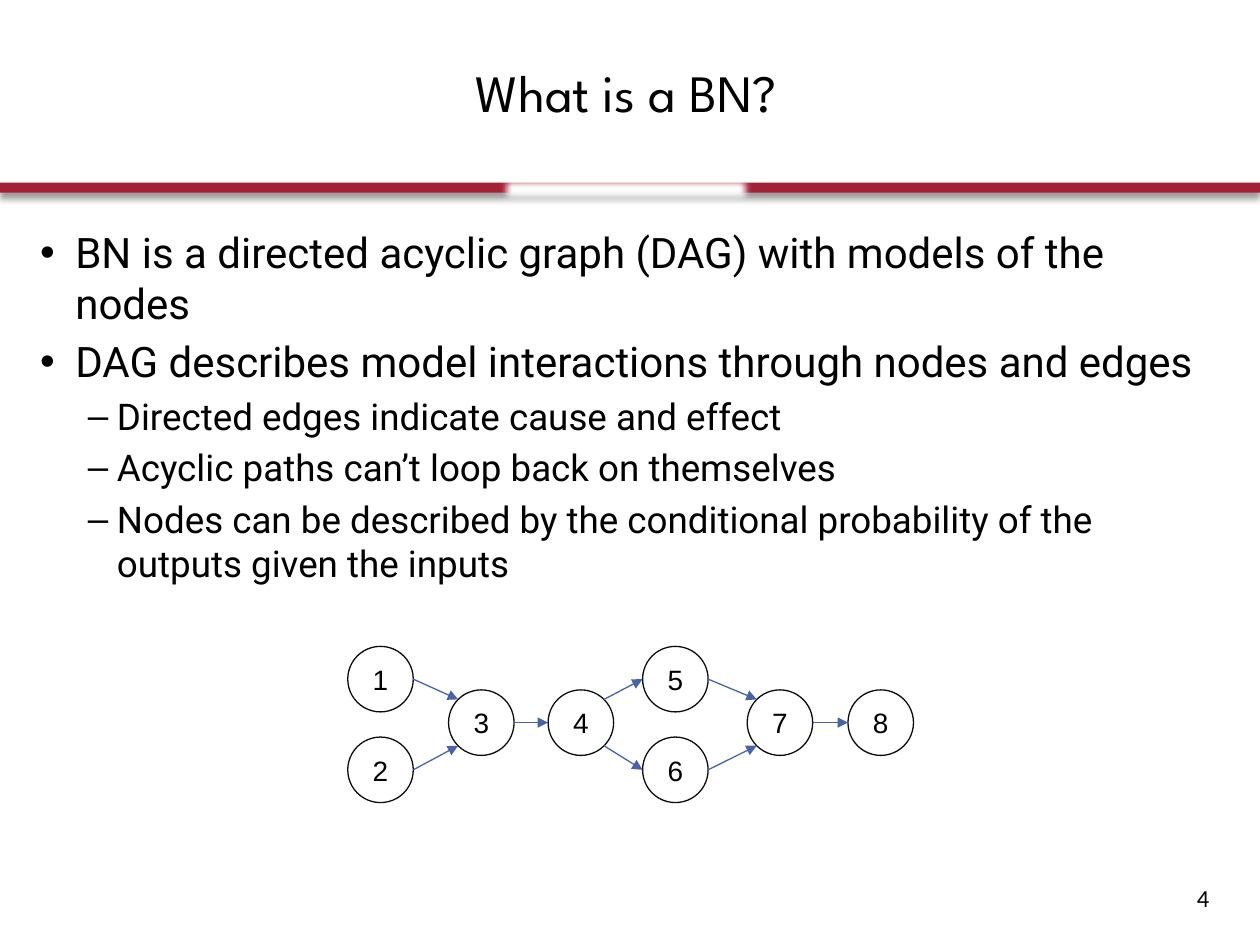
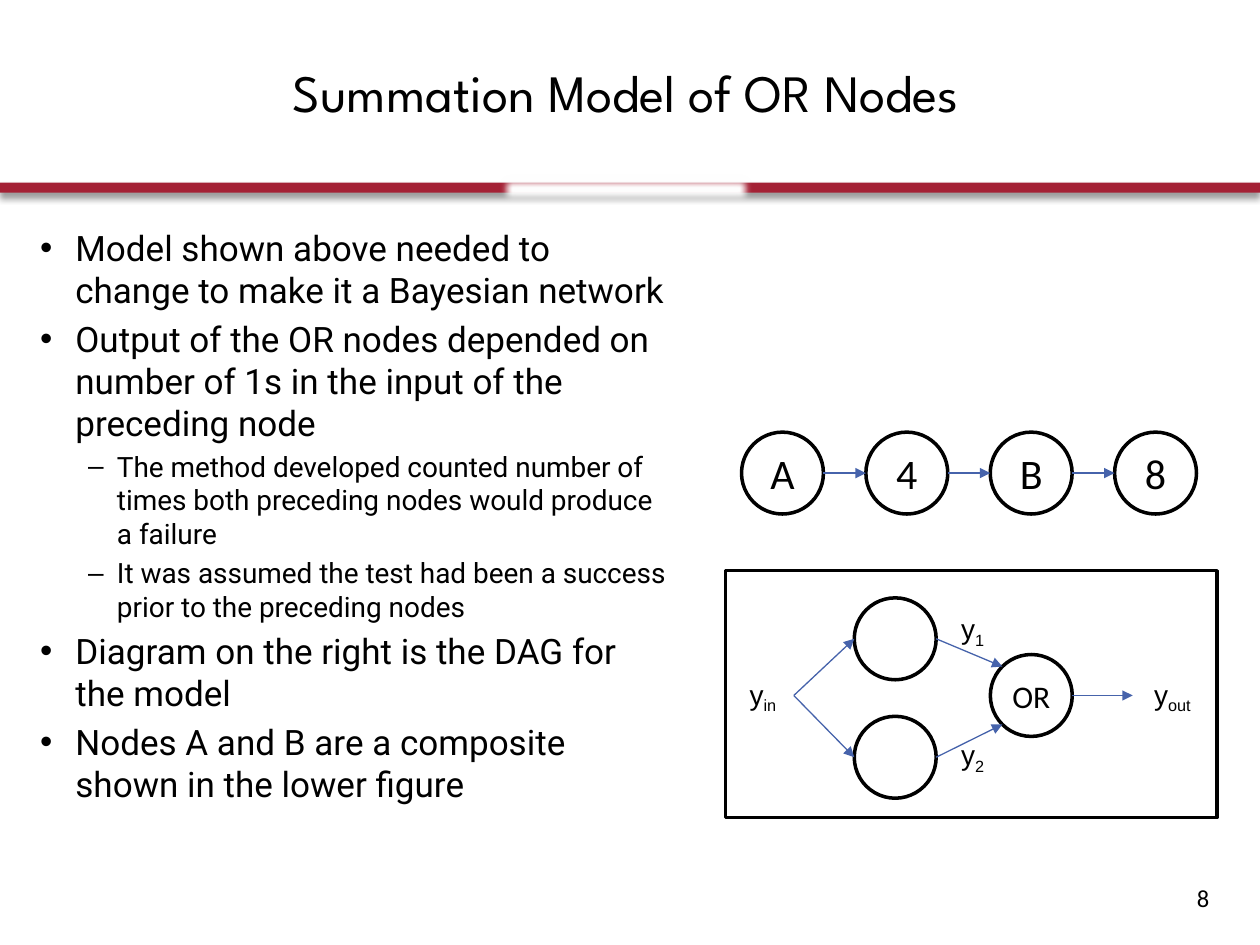
"""Builds two slides on Bayesian networks and OR nodes."""
from collections import namedtuple
from math import copysign, sqrt

from lxml.etree import SubElement, fromstring
from pptx import Presentation
from pptx.dml.color import RGBColor
from pptx.enum.shapes import MSO_CONNECTOR as Link, MSO_SHAPE as Shape
from pptx.enum.text import MSO_ANCHOR as Anchor, PP_ALIGN as Align
from pptx.oxml.ns import qn
from pptx.util import Inches, Pt

NS = 'xmlns:a="http://schemas.openxmlformats.org/drawingml/2006/main"'
CELL = 0.1
COLUMNS, ROWS = 100, 75
Node = namedtuple("Node", "x y radius")


def cells(*counts):
    return [Inches(count * CELL) for count in counts]


def rgb(code):
    return RGBColor.from_string(code)


class Deck:
    """Holds the shared style and the slide being drawn."""
    BLACK, WHITE, RED, BLUE = "000000", "FFFFFF", "A42135", "4663AB"
    HEADING, BODY, LABEL, NUMBER = "League Spartan", "Roboto", "Arial", "Calibri"
    LEVELS = [("•", 0.28, -0.28), ("–", 0.61, -0.23)]

    def __init__(self):
        self.file = Presentation()
        self.file.slide_width, self.file.slide_height = cells(COLUMNS, ROWS)
        self.slide = None

    def start(self, title, number):
        self.slide = self.file.slides.add_slide(self.file.slide_layouts[6])
        band = self.shape(Shape.RECTANGLE, 0, 14.5, COLUMNS, 0.8, fill=self.RED)
        self.effect(band, '<a:outerShdw blurRad="50800" dist="38100" dir="5400000">'
                    '<a:srgbClr val="000000"><a:alpha val="40000"/></a:srgbClr></a:outerShdw>')
        gap = self.shape(Shape.RECTANGLE, 39.4, 13.6, 20.6, 2.9, fill=self.WHITE)
        self.effect(gap, '<a:softEdge rad="63500"/>')
        heading = self.frame(self.box(17.7, 1.8, 64, 11), Align.CENTER, Anchor.MIDDLE)
        self.run(heading, title, 30, self.HEADING)
        page = self.frame(self.box(94, 69.6, 5.1, 4))
        self.run(page, number, 14, self.NUMBER)

    def box(self, *place):
        return self.slide.shapes.add_textbox(*cells(*place))

    def shape(self, kind, *place, fill=None, line=None, width=0.75):
        shape = self.slide.shapes.add_shape(kind, *cells(*place))
        shape.shadow.inherit = False
        if fill:
            shape.fill.solid()
            shape.fill.fore_color.rgb = rgb(fill)
        else:
            shape.fill.background()
        if line:
            shape.line.color.rgb = rgb(line)
            shape.line.width = Pt(width)
        else:
            shape.line.fill.background()
        return shape

    def effect(self, shape, inner):
        effects = shape._element.spPr.find(qn("a:effectLst"))
        effects.append(fromstring(inner.replace(" ", f" {NS} ", 1)))

    def frame(self, shape, align=Align.LEFT, anchor=Anchor.TOP, tight=False):
        frame = shape.text_frame
        frame.word_wrap, frame.vertical_anchor = True, anchor
        if tight:
            frame.margin_left = frame.margin_right = frame.margin_top = frame.margin_bottom = 0
        frame.paragraphs[0].alignment = align
        return frame.paragraphs[0]

    def run(self, paragraph, words, size, face):
        run = paragraph.add_run()
        run.text = words
        run.font.size, run.font.name = Pt(size), face
        run.font.color.rgb = rgb(self.BLACK)
        return run._r.get_or_add_rPr()

    def bullets(self, place, sizes, points):
        area = self.box(*place)
        first = self.frame(area)
        for index, (level, words) in enumerate(points):
            point = area.text_frame.add_paragraph() if index else first
            mark, margin, indent = self.LEVELS[level]
            props = point._p.get_or_add_pPr()
            props.set("marL", str(Inches(margin)))
            props.set("indent", str(Inches(indent)))
            SubElement(props, qn("a:buFont")).set("typeface", self.LABEL)
            SubElement(props, qn("a:buChar")).set("char", mark)
            point.level = level
            point.space_before = Pt(0.2 * sizes[level] if index else 0)
            self.run(point, words, sizes[level], self.BODY)

    def node(self, node, words="", kind=Shape.OVAL, size=24, face=NUMBER, line=BLACK, width=2):
        side = 2 * node.radius
        circle = self.shape(kind, node.x - node.radius, node.y - node.radius, side, side,
                            line=line, width=width)
        if words:
            label = self.frame(circle, Align.CENTER, Anchor.MIDDLE, tight=True)
            self.run(label, words, size, face)

    def variable(self, subscript, *place):
        label = self.frame(self.box(*place), Align.CENTER, Anchor.MIDDLE, tight=True)
        self.run(label, "y", 16, self.LABEL)
        self.run(label, subscript, 16, self.LABEL).set("baseline", "-25000")

    def rim(self, node, other, axis):
        reach = copysign(node.radius, other.x - node.x)
        if node.y == axis != other.y:
            corner = node.radius / sqrt(2)
            return (node.x + reach / sqrt(2), node.y + copysign(corner, other.y - axis))
        return node.x + reach, node.y

    def arrow(self, source, target, axis):
        ends = self.rim(source, target, axis) + self.rim(target, source, axis)
        arrow = self.slide.shapes.add_connector(Link.STRAIGHT, *cells(*ends))
        arrow.line.color.rgb = rgb(self.BLUE)
        arrow.line.width = Pt(0.75)
        SubElement(arrow.line._get_or_add_ln(), qn("a:tailEnd")).set("type", "triangle")
        SubElement(arrow._element.spPr, qn("a:effectLst"))


def network_slide(deck):
    deck.start("What is a BN?", "4")
    deck.bullets((2.2, 17.5, 95.4, 30.8), (24, 21), [
        (0, "BN is a directed acyclic graph (DAG) with models of the nodes"),
        (0, "DAG describes model interactions through nodes and edges"),
        (1, "Directed edges indicate cause and effect"),
        (1, "Acyclic paths can’t loop back on themselves"),
        (1, "Nodes can be described by the conditional probability of the outputs "
            "given the inputs"),
    ])
    upper, axis, lower = 53.9, 57.35, 61.1
    centres = {"1": (30.2, upper), "2": (30.2, lower), "3": (38.2, axis), "4": (46.1, axis),
               "5": (53.6, upper), "6": (53.6, lower), "7": (61.9, axis), "8": (69.9, axis)}
    nodes = {name: Node(*centre, 2.6) for name, centre in centres.items()}
    for name, node in nodes.items():
        deck.node(node, name, Shape.FLOWCHART_CONNECTOR, 16, deck.LABEL, "0C0C0C", 0.75)
    for source, target in ("13", "23", "34", "45", "46", "57", "67", "78"):
        deck.arrow(nodes[source], nodes[target], axis)


def or_slide(deck):
    deck.start("Summation Model of OR Nodes", "8")
    deck.bullets((2.2, 17.5, 52.1, 49.5), (20, 16), [
        (0, "Model shown above needed to change to make it a Bayesian network"),
        (0, "Output of the OR nodes depended on number of 1s in the input of the preceding node"),
        (1, "The method developed counted number of times both preceding nodes would "
            "produce a failure"),
        (1, "It was assumed the test had been a success prior to the preceding nodes"),
        (0, "Diagram on the right is the DAG for the model"),
        (0, "Nodes A and B are a composite shown in the lower figure"),
    ])
    radius, chain_row, axis = 3.25, 37.55, 55.2
    chain = [Node(62.1 + 9.87 * step, chain_row, radius) for step in range(4)]
    for node, name in zip(chain, "A4B8"):
        deck.node(node, name)
    for source, target in zip(chain, chain[1:]):
        deck.arrow(source, target, chain_row)

    deck.shape(Shape.RECTANGLE, 57.6, 45.3, 39, 19.6, line=deck.BLACK, width=2)
    entry, leave = Node(63, axis, 0), Node(89.9, axis, 0)
    gate = Node(81.85, axis, radius)
    deck.node(gate, "OR", size=18)
    for row in (50.7, 60.1):
        branch = Node(71.05, row, radius)
        deck.node(branch)
        deck.arrow(entry, branch, axis)
        deck.arrow(branch, gate, axis)
    deck.arrow(gate, leave, axis)
    for subscript, left, top, width in (("in", 58.2, 53.4, 4.7), ("out", 89.8, 53.4, 6.5),
                                        ("1", 73.1, 48.2, 8.2), ("2", 73.1, 58.2, 8.2)):
        deck.variable(subscript, left, top, width, 3.7)


def main():
    deck = Deck()
    network_slide(deck)
    or_slide(deck)
    deck.file.save("out.pptx")


if __name__ == "__main__":
    main()
